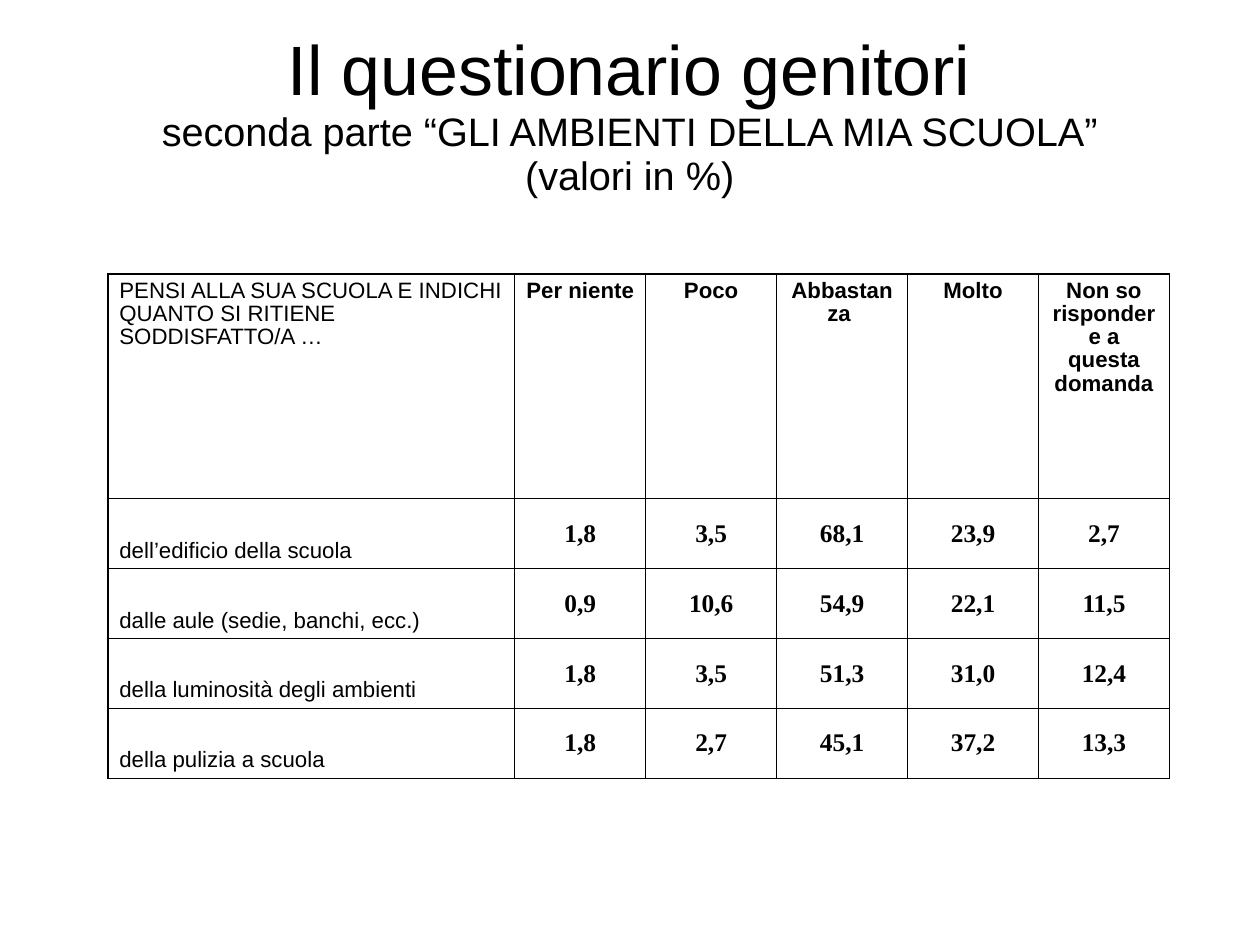
from lxml.etree import SubElement
from pptx import Presentation
from pptx.dml.color import RGBColor
from pptx.enum.text import MSO_ANCHOR, MSO_AUTO_SIZE, PP_ALIGN
from pptx.oxml.ns import qn
from pptx.util import Pt

BLACK = "000000"
WHITE = "FFFFFF"
TITLE_LINES = [
    ("Il questionario genitori", 44),
    ("seconda parte “GLI AMBIENTI DELLA MIA SCUOLA”", 25),
    ("(valori in %)", 25),
]
ANSWERS = [
    "PENSI ALLA SUA SCUOLA E INDICHI QUANTO SI RITIENE SODDISFATTO/A …",
    "Per niente", "Poco", "Abbastanza ", "Molto",
    "Non so rispondere a questa domanda",
]
RATINGS = [
    ["dell’edificio della scuola", "1,8", "3,5", "68,1", "23,9", "2,7"],
    ["dalle aule (sedie, banchi, ecc.)", "0,9", "10,6", "54,9", "22,1", "11,5"],
    ["della luminosità degli ambienti", "1,8", "3,5", "51,3", "31,0", "12,4"],
    ["della pulizia a scuola", "1,8", "2,7", "45,1", "37,2", "13,3"],
]


def colour(hex_string):
    return RGBColor.from_string(hex_string)


def format_run(run, size, face="Arial", bold=False):
    run.font.size = Pt(size)
    run.font.name = face
    run.font.bold = bold
    run.font.color.rgb = colour(BLACK)


def add_title(slide):
    title = slide.shapes.title
    title.left, title.top, title.width, title.height = Pt(39.6), Pt(23.5), Pt(714.2), Pt(99.4)
    frame = title.text_frame
    frame.text = "\v".join(line for line, size in TITLE_LINES)
    frame.auto_size = MSO_AUTO_SIZE.NONE
    frame.word_wrap = True
    frame.vertical_anchor = MSO_ANCHOR.MIDDLE
    frame.margin_left = frame.margin_right = frame.margin_top = frame.margin_bottom = Pt(0)
    heading = frame.paragraphs[0]
    heading.alignment = PP_ALIGN.CENTER
    heading.line_spacing = 0.93
    for run, (line, size) in zip(heading.runs, TITLE_LINES):
        format_run(run, size)
    for line_break in heading._p.findall(qn("a:br")):
        SubElement(line_break, qn("a:rPr"), sz="2500")


def add_borders(cell, left, right, top, bottom):
    """Draw the four sides of a cell with the given line widths in points."""
    properties = cell._tc.get_or_add_tcPr()
    for side, width in zip("LRTB", (left, right, top, bottom)):
        line = SubElement(properties, qn(f"a:ln{side}"), w=str(int(Pt(width))))
        SubElement(SubElement(line, qn("a:solidFill")), qn("a:srgbClr"), val=BLACK)


def fill_cell(cell, text, anchor, alignment, spacing, size=14, face="Arial", bold=False):
    cell.text_frame.text = text
    cell.vertical_anchor = anchor
    paragraph = cell.text_frame.paragraphs[0]
    paragraph.alignment = alignment
    paragraph.line_spacing = spacing
    format_run(paragraph.runs[0], size, face, bold)


def add_answer_cell(cell, text, is_question):
    alignment = PP_ALIGN.LEFT if is_question else PP_ALIGN.CENTER
    fill_cell(cell, text, MSO_ANCHOR.TOP, alignment, 0.93, bold=not is_question)
    add_borders(cell, 0.96, 0.96, 0.96, 0.96 if is_question else 0.75)
    cell.fill.solid()
    cell.fill.fore_color.rgb = colour(WHITE)


def add_topic_cell(cell, text):
    fill_cell(cell, text, MSO_ANCHOR.BOTTOM, PP_ALIGN.LEFT, 0.93)
    add_borders(cell, 0.96, 0.75, 0.96, 0.96)
    cell.fill.solid()
    cell.fill.fore_color.rgb = colour(WHITE)


def add_percentage_cell(cell, text):
    fill_cell(cell, text, MSO_ANCHOR.MIDDLE, PP_ALIGN.CENTER, 1.0, 16, "Times New Roman", True)
    add_borders(cell, 0.75, 0.75, 0.75, 0.75)
    cell.fill.background()


def add_ratings_table(slide):
    widths = [256.3] + [82.5] * 5
    heights = [141.6] + [44] * len(RATINGS)
    table = slide.shapes.add_table(
        len(heights), len(widths), Pt(68), Pt(172.6),
        Pt(sum(widths)), Pt(sum(heights))).table
    table.first_row = table.horz_banding = False
    for column, width in zip(table.columns, widths):
        column.width = Pt(width)
    for row, height in zip(table.rows, heights):
        row.height = Pt(height)
    for column, answer in enumerate(ANSWERS):
        add_answer_cell(table.cell(0, column), answer, column == 0)
    for row, (topic, *percentages) in enumerate(RATINGS, start=1):
        add_topic_cell(table.cell(row, 0), topic)
        for column, percentage in enumerate(percentages, start=1):
            add_percentage_cell(table.cell(row, column), percentage)


def main():
    presentation = Presentation()
    presentation.slide_width, presentation.slide_height = Pt(793.75), Pt(595.25)
    slide = presentation.slides.add_slide(presentation.slide_layouts[5])
    add_title(slide)
    add_ratings_table(slide)
    presentation.save("out.pptx")


if __name__ == "__main__":
    main()
